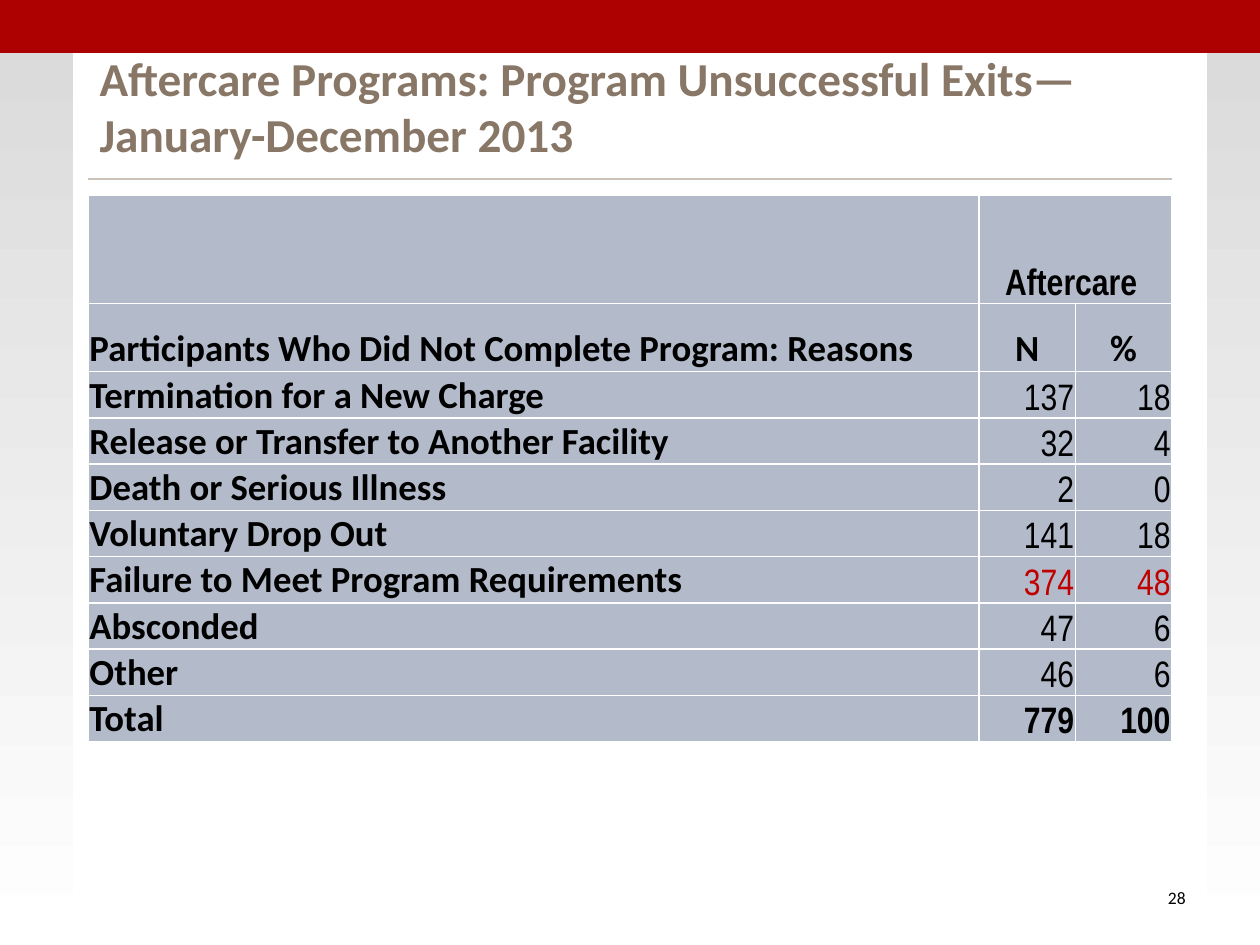
import pptx
import pptx.util
import pptx.dml.color
import pptx.enum.shapes
import pptx.enum.text
import pptx.oxml
import pptx.oxml.ns

COLORS = {
    "red band": "AD0101", "panel": "FFFFFF", "rule": "CBC2B9",
    "title": "887766", "cell": "B3BBCB", "border": "FFFFFF",
    "text": "000000", "highlight": "C00000",
    "backdrop top": "D9D9D9", "backdrop bottom": "FFFFFF",
}
ALIGN = pptx.enum.text.PP_ALIGN
ANCHOR = pptx.enum.text.MSO_ANCHOR

REASONS = [
    ("Termination for a New Charge", 137, 18),
    ("Release or Transfer to Another Facility", 32, 4),
    ("Death or Serious Illness", 2, 0),
    ("Voluntary Drop Out", 141, 18),
    ("Failure to Meet Program Requirements", 374, 48),
    ("Absconded", 47, 6),
    ("Other", 46, 6),
    ("Total", 779, 100),
]


def color(name):
    return pptx.dml.color.RGBColor.from_string(COLORS[name])


def write(frame, text, size=21, font="Calibri", fill="text", bold=False,
          align=ALIGN.LEFT):
    """Put one formatted paragraph into a text frame."""
    paragraph = frame.paragraphs[0]
    paragraph.alignment = align
    run = paragraph.add_run()
    run.text = text
    run.font.size = pptx.util.Pt(size)
    run.font.name = font
    run.font.bold = bold
    run.font.color.rgb = color(fill)


class Board:
    """One slide on a grid of 100 columns by 75 rows."""
    COLUMNS, ROWS = 100, 75
    INSETS = (0.09, 0.04, 0.09, 0.04)

    def __init__(self, deck):
        self.column = deck.slide_width / self.COLUMNS
        self.row = deck.slide_height / self.ROWS
        self.slide = deck.slides.add_slide(deck.slide_layouts[5])
        self.shapes = self.slide.shapes

    def across(self, columns):
        return pptx.util.Emu(round(columns * self.column))

    def down(self, rows):
        return pptx.util.Emu(round(rows * self.row))

    def box(self, left, top, width, height):
        return (self.across(left), self.down(top),
                self.across(width), self.down(height))

    def backdrop(self, top, bottom):
        fill = self.slide.background.fill
        fill.gradient()
        fill.gradient_angle = 270
        for stop, name in zip(fill.gradient_stops, (top, bottom)):
            stop.color.rgb = color(name)

    def block(self, fill, *place):
        block = self.shapes.add_shape(
            pptx.enum.shapes.MSO_SHAPE.RECTANGLE, *self.box(*place))
        block.shadow.inherit = False
        block.fill.solid()
        block.fill.fore_color.rgb = color(fill)
        block.line.fill.background()

    def rule(self, left, right, level):
        rule = self.shapes.add_connector(
            pptx.enum.shapes.MSO_CONNECTOR.STRAIGHT,
            self.across(left), self.down(level),
            self.across(right), self.down(level))
        rule.line.color.rgb = color("rule")
        rule.line.width = pptx.util.Pt(1.25)
        rule._element.spPr.append(
            pptx.oxml.parse_xml(f"<a:effectLst {pptx.oxml.ns.nsdecls('a')}/>"))

    def frame(self, holder, anchor):
        frame = holder.text_frame
        frame.word_wrap = True
        frame.auto_size = pptx.enum.text.MSO_AUTO_SIZE.NONE
        frame.vertical_anchor = anchor
        (frame.margin_left, frame.margin_top, frame.margin_right,
         frame.margin_bottom) = map(pptx.util.Inches, self.INSETS)
        return frame

    def title(self, text, *place):
        title = self.shapes.title
        title.left, title.top, title.width, title.height = self.box(*place)
        # Bring the placeholder in front of the decoration
        self.shapes._spTree.append(title._element)
        write(self.frame(title, ANCHOR.BOTTOM), text, size=27, fill="title",
              bold=True)

    def label(self, text, *place, **style):
        label = self.shapes.add_textbox(*self.box(*place))
        write(self.frame(label, ANCHOR.MIDDLE), text, **style)

    def table(self, left, top, widths, heights):
        table = self.shapes.add_table(
            len(heights), len(widths),
            *self.box(left, top, sum(widths), sum(heights))).table
        table.first_row = table.horz_banding = False
        for column, width in zip(table.columns, widths):
            column.width = self.across(width)
        for row, height in zip(table.rows, heights):
            row.height = self.down(height)
        for cell in table.iter_cells():
            self.dress(cell)
        return table

    def dress(self, cell):
        cell.vertical_anchor = ANCHOR.BOTTOM
        cell.margin_left = cell.margin_top = cell.margin_right = \
            pptx.util.Inches(0.01)
        cell.margin_bottom = 0
        properties = cell._tc.get_or_add_tcPr()
        for side in ("lnL", "lnR", "lnT", "lnB"):
            properties.append(pptx.oxml.parse_xml(
                f"<a:{side} {pptx.oxml.ns.nsdecls('a')} w='12700'><a:solidFill>"
                f"<a:srgbClr val='{COLORS['border']}'/></a:solidFill></a:{side}>"))
        cell.fill.solid()
        cell.fill.fore_color.rgb = color("cell")


def main():
    deck = pptx.Presentation()
    deck.slide_width = pptx.util.Inches(10)
    deck.slide_height = pptx.util.Inches(7.5)
    board = Board(deck)

    # Backdrop, white panel, red band and rule
    board.backdrop("backdrop top", "backdrop bottom")
    board.block("panel", 5.8, 4.2, 90, 70.8)
    board.block("red band", 0, 0, 100, 4.2)
    board.rule(7, 93, 14.2)

    # Title and page number
    board.title("Aftercare Programs: Program Unsuccessful Exits—"
                "January-December 2013", 7, 5, 86, 8.3)
    board.label("28", 86.7, 69.2, 8.3, 4, size=10, align=ALIGN.RIGHT)

    # Table headings
    exits = board.table(7, 15.5, [70.7, 7.65, 7.65],
                        [8.6, 5.4] + [3.67] * len(REASONS))
    exits.cell(0, 1).merge(exits.cell(0, 2))
    write(exits.cell(0, 1).text_frame, "Aftercare ", font="Arial Narrow",
          bold=True, align=ALIGN.CENTER)
    headings = ("Participants Who Did Not Complete Program: Reasons", "N", "%")
    for index, heading in enumerate(headings):
        write(exits.cell(1, index).text_frame, heading, bold=True,
              align=ALIGN.CENTER if index else ALIGN.LEFT)

    # One row per reason, the most frequent one highlighted
    most = max(count for _, count, _ in REASONS[:-1])
    for row, (reason, count, percent) in enumerate(REASONS, start=2):
        write(exits.cell(row, 0).text_frame, reason, bold=True)
        for index, value in enumerate((count, percent), start=1):
            write(exits.cell(row, index).text_frame, str(value),
                  font="Arial Narrow", bold=reason == "Total",
                  fill="highlight" if count == most else "text",
                  align=ALIGN.RIGHT)

    deck.save("out.pptx")


if __name__ == "__main__":
    main()
